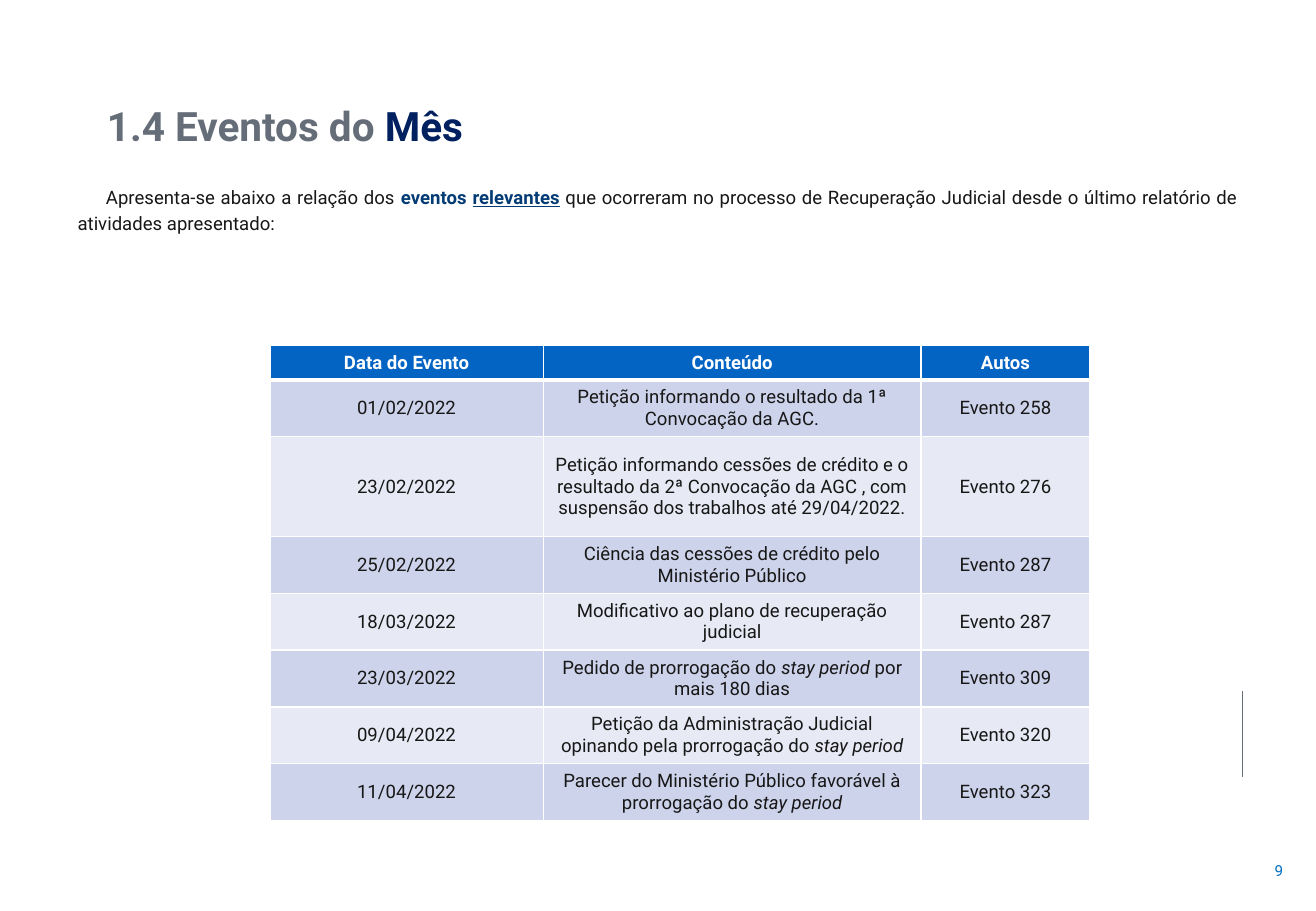
from lxml import etree
from pptx import Presentation
from pptx.dml.color import RGBColor
from pptx.enum.shapes import MSO_CONNECTOR
from pptx.enum.text import MSO_ANCHOR as ANCHOR, PP_ALIGN as ALIGN
from pptx.oxml.ns import qn
from pptx.util import Pt

FONT = "Roboto"
GREY, NAVY, BLUE, INK, WHITE = "656D78", "002060", "033C75", "181717", "FFFFFF"
HEADER_FILL, BANDS = "0464C4", ("CCD3EA", "E7EAF5")

TITLE = [("1.4 Eventos do ", {"color": GREY}), ("Mês", {"color": NAVY})]
INTRO = [
    ("Apresenta-se abaixo a relação dos ", {}),
    ("eventos ", {"color": BLUE, "bold": True}),
    ("relevantes", {"color": BLUE, "bold": True, "underline": True}),
    (" que ocorreram no processo de Recuperação Judicial desde o último "
     "relatório de atividades apresentado:", {}),
]
PAGE = "9"
STAY = ("stay period", {"italic": True})
HEADER = ("Data do Evento", "Conteúdo", "Autos")
# date, content, case record, lines of content
EVENTS = [
    ("01/02/2022", "Petição informando o resultado da 1ª Convocação da AGC.", "Evento 258", 2),
    ("23/02/2022", "Petição informando cessões de crédito e o resultado da 2ª Convocação "
     "da AGC , com suspensão dos trabalhos até 29/04/2022.", "Evento 276", 4),
    ("25/02/2022", "Ciência das cessões de crédito pelo Ministério Público", "Evento 287", 2),
    ("18/03/2022", "Modificativo ao plano de recuperação judicial", "Evento 287", 2),
    ("23/03/2022", [("Pedido de prorrogação do ", {}), STAY, (" por mais 180 dias", {})],
     "Evento 309", 2),
    ("09/04/2022", [("Petição da Administração Judicial opinando pela prorrogação do ", {}), STAY],
     "Evento 320", 2),
    ("11/04/2022", [("Parecer do Ministério Público favorável à prorrogação do ", {}), STAY],
     "Evento 323", 2),
]
COL_WIDTHS = (162, 224, 100)
LINE_HEIGHT, CELL_PADDING = 13, 7.2


def rgb(color):
    return RGBColor.from_string(color)


def write(tf, text, size=11, color=INK, bold=False, align=ALIGN.LEFT, spacing=None, indent=0):
    """Write a string, or a list of (text, run format) pairs, as one paragraph."""
    p = tf.paragraphs[0]
    p.alignment = align
    if spacing:
        p.line_spacing = spacing
    if indent:
        pPr = p._p.get_or_add_pPr()
        pPr.set("marL", "0")
        pPr.set("indent", str(Pt(indent)))
    for part, fmt in [(text, {})] if isinstance(text, str) else text:
        r = p.add_run()
        r.text = part
        r.font.name, r.font.size = FONT, Pt(size)
        r.font.bold = fmt.get("bold", bold)
        r.font.italic = fmt.get("italic", False)
        r.font.underline = fmt.get("underline", False)
        r.font.color.rgb = rgb(fmt.get("color", color))


def add_text(s, box, text, anchor=ANCHOR.TOP, **fmt):
    tf = s.shapes.add_textbox(*map(Pt, box)).text_frame
    tf.word_wrap = True
    tf.vertical_anchor = anchor
    write(tf, text, **fmt)


def set_borders(cell, bottom):
    tcPr = cell._tc.get_or_add_tcPr()
    for i, (tag, width) in enumerate((("lnL", 1), ("lnR", 1), ("lnT", 1), ("lnB", bottom))):
        ln = etree.Element(qn("a:" + tag), w=str(Pt(width)))
        fill = etree.SubElement(ln, qn("a:solidFill"))
        etree.SubElement(fill, qn("a:srgbClr"), val=WHITE)
        tcPr.insert(i, ln)


def add_events_table(s, left, top):
    rows = [(*HEADER, 1)] + EVENTS
    heights = [CELL_PADDING + LINE_HEIGHT * row[-1] for row in rows]
    table = s.shapes.add_table(len(rows), len(HEADER), Pt(left), Pt(top),
                               Pt(sum(COL_WIDTHS)), Pt(sum(heights))).table
    for col, width in zip(table.columns, COL_WIDTHS):
        col.width = Pt(width)
    for i, (*texts, _) in enumerate(rows):
        table.rows[i].height = Pt(heights[i])
        head = i == 0
        for j, text in enumerate(texts):
            cell = table.cell(i, j)
            cell.vertical_anchor = ANCHOR.MIDDLE
            cell.fill.solid()
            cell.fill.fore_color.rgb = rgb(HEADER_FILL if head else BANDS[(i - 1) % 2])
            set_borders(cell, bottom=3 if head else 1)
            write(cell.text_frame, text, color=WHITE if head else INK, bold=head,
                  align=ALIGN.CENTER)


def add_side_rule(s, x, top, bottom):
    line = s.shapes.add_connector(MSO_CONNECTOR.STRAIGHT, Pt(x), Pt(top), Pt(x), Pt(bottom))
    line.line.color.rgb = rgb(GREY)
    line.line.width = Pt(0.5)
    etree.SubElement(line._element.spPr, qn("a:effectLst"))


prs = Presentation()
prs.slide_width, prs.slide_height = Pt(780), Pt(540)
s = prs.slides.add_slide(prs.slide_layouts[6])
add_text(s, (710.6, 498.2, 57, 36), PAGE, anchor=ANCHOR.MIDDLE, size=9, color="0070C0",
         align=ALIGN.RIGHT)
add_side_rule(s, 736.5, 409.7, 460.8)
add_text(s, (56.2, 59.5, 589, 38), TITLE, size=24, bold=True, spacing=0.9)
add_text(s, (38.9, 105.1, 702, 37), INTRO, align=ALIGN.JUSTIFY, spacing=1.14, indent=16.8)
add_events_table(s, 160, 204.8)
prs.save("out.pptx")
